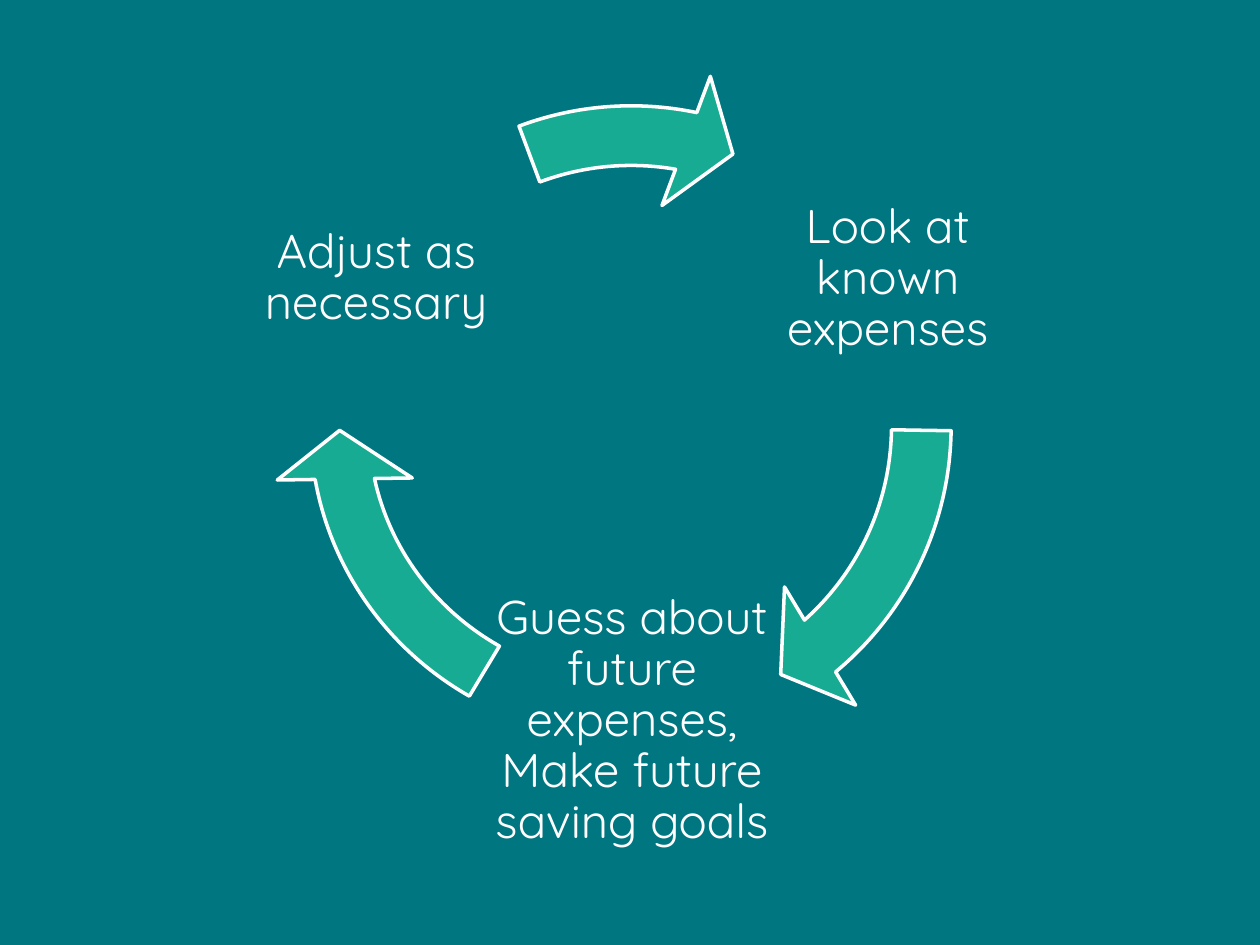
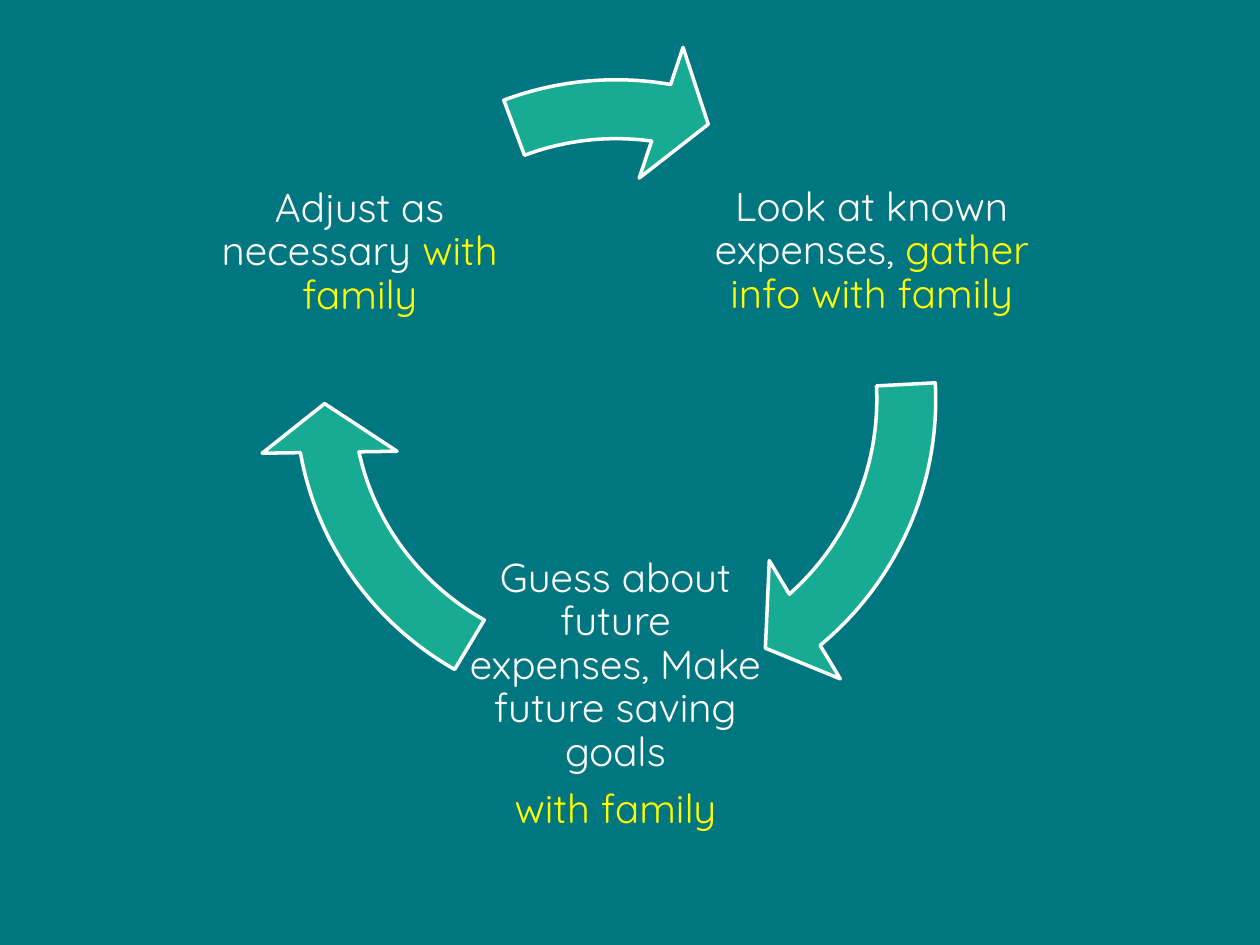
from pptx import Presentation
from pptx.dml.color import RGBColor
from pptx.enum.shapes import MSO_SHAPE
from pptx.enum.text import MSO_ANCHOR, PP_ALIGN
from pptx.util import Inches, Pt

CIRCULAR_ARROW = MSO_SHAPE.CIRCULAR_ARROW
MIDDLE = MSO_ANCHOR.MIDDLE
CENTER = PP_ALIGN.CENTER

COLORS = {
    "background": "007680",
    "arrow": "16AB92",
    "text": "FFFFFF",
    "family": "FFFF00",
}
FONT = "Quicksand"
DEGREE = 0.6  # one degree in units of an arrow adjustment
HEAD_ANGLE = 9.6
HEAD_WIDTH = 0.096


def color(name):
    return RGBColor.from_string(COLORS[name])


# A step holds its label box, its paragraphs of (text, colour) runs,
# its arrow box and the angles where the arrow ends and starts.
cycles = [
    {
        "size": 27, "inset": 0.04, "thickness": 0.083,
        "steps": [
            ((5.84, 1.01, 2.41, 2.41),
             [[("Look at known expenses", "text")]],
             (2.16, 0.53, 5.7, 5.7), 49.38, 0.88),
            ((3.81, 4.52, 2.41, 2.41),
             [[("Guess about future expenses, Make future saving goals", "text")]],
             (2.16, 0.59, 5.71, 5.58), 169.52, 121.02),
            ((1.78, 1.01, 2.41, 2.41),
             [[("Adjust as necessary", "text")]],
             (2.16, 0.53, 5.7, 5.7), 280.93, 249.47),
        ],
    },
    {
        "size": 23, "inset": 0.03, "thickness": 0.082,
        "steps": [
            ((5.46, 0.95, 2.92, 2.1),
             [[("Look at known expenses, ", "text"),
               ("gather info with family", "family")]],
             (2.04, 0.32, 5.7, 5.7), 49.43, 357.03),
            ((3.68, 4.31, 2.41, 2.41),
             [[("Guess about future expenses, Make future saving goals", "text")],
              [("with family", "family")]],
             (2.04, 0.38, 5.71, 5.58), 169.57, 120.98),
            ((1.65, 0.8, 2.41, 2.41),
             [[("Adjust as necessary ", "text"), ("with family", "family")]],
             (2.04, 0.32, 5.7, 5.7), 278.93, 249.43),
        ],
    },
]

prs = Presentation()
prs.slide_width, prs.slide_height = Inches(10), Inches(7.5)
master_fill = prs.slide_master.background.fill
master_fill.solid()
master_fill.fore_color.rgb = color("background")
blank_layout = prs.slide_layouts[6]

for cycle in cycles:
    slide = prs.slides.add_slide(blank_layout)
    inset = Inches(cycle["inset"])

    for label_box, paragraphs, arrow_box, end_angle, start_angle in cycle["steps"]:
        label = slide.shapes.add_textbox(*map(Inches, label_box)).text_frame
        label.word_wrap = True
        label.vertical_anchor = MIDDLE
        label.margin_left = label.margin_right = inset
        label.margin_top = label.margin_bottom = inset
        for index, runs in enumerate(paragraphs):
            paragraph = label.add_paragraph() if index else label.paragraphs[0]
            paragraph.alignment = CENTER
            paragraph.line_spacing = 0.9
            paragraph.space_after = Pt(0.35 * cycle["size"])
            for text, color_name in runs:
                run = paragraph.add_run()
                run.text = text
                run.font.name = FONT
                run.font.size = Pt(cycle["size"])
                run.font.color.rgb = color(color_name)

        arrow = slide.shapes.add_shape(CIRCULAR_ARROW, *map(Inches, arrow_box))
        arrow.shadow.inherit = False
        arrow.fill.solid()
        arrow.fill.fore_color.rgb = color("arrow")
        arrow.line.color.rgb = color("text")
        arrow.line.width = Pt(2)
        arrow.adjustments[0] = cycle["thickness"]
        for position, angle in enumerate((HEAD_ANGLE, end_angle, start_angle), 1):
            arrow.adjustments[position] = angle * DEGREE
        arrow.adjustments[4] = HEAD_WIDTH

prs.save("out.pptx")
